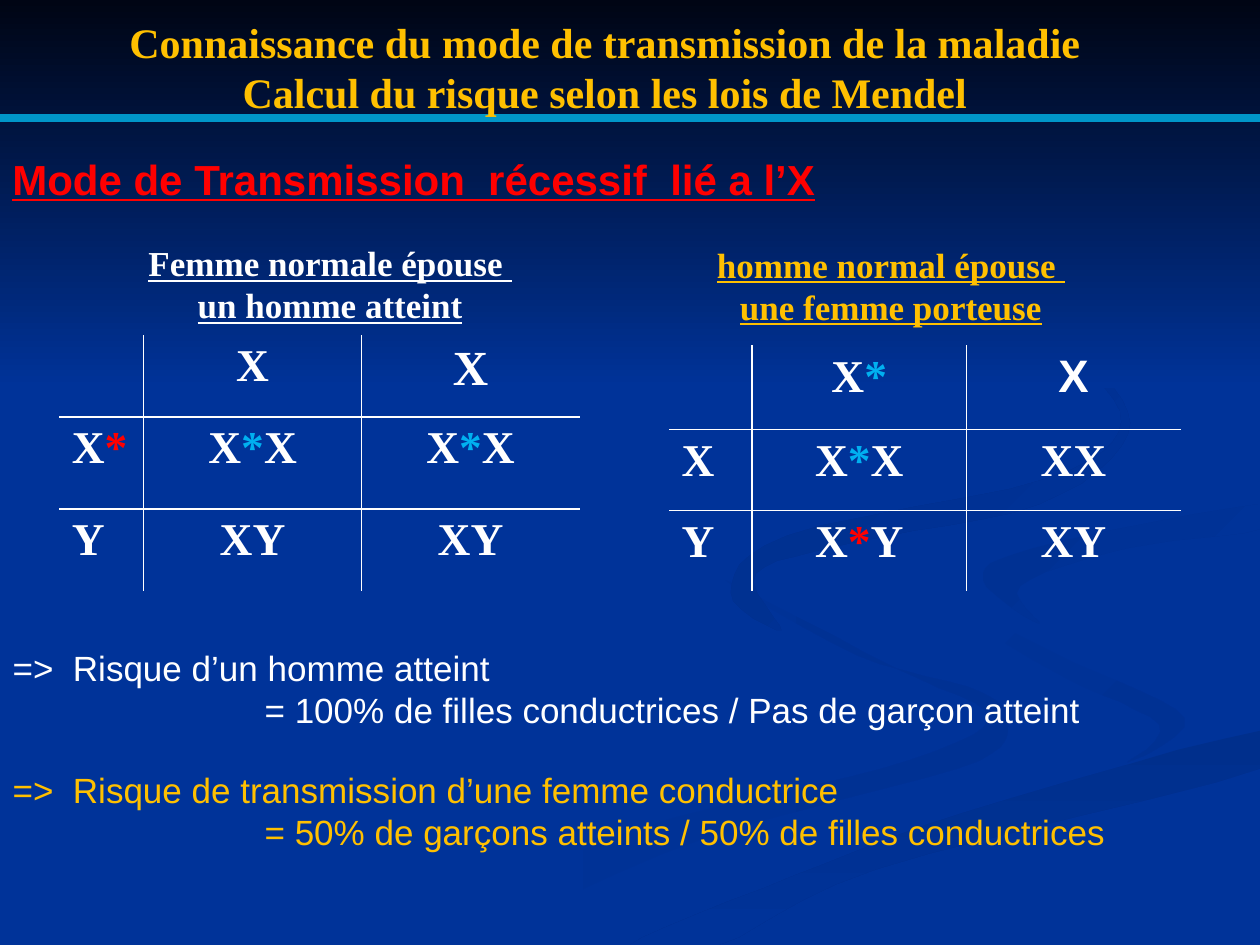
from lxml.etree import SubElement
from pptx import Presentation
from pptx.dml.color import RGBColor
from pptx.enum.shapes import MSO_CONNECTOR as CONN, MSO_SHAPE as SHAPE
from pptx.enum.text import MSO_ANCHOR as ANCHOR, MSO_AUTO_SIZE as AUTO, PP_ALIGN as ALIGN
from pptx.oxml.ns import qn
from pptx.util import Inches, Pt

NAVY = RGBColor(0x00, 0x33, 0x99)
NAVY_MID = RGBColor(0x00, 0x31, 0x93)
NAVY_DARK = RGBColor(0x00, 0x2F, 0x8C)
NIGHT = RGBColor(0x00, 0x05, 0x14)
WHITE = RGBColor(0xFF, 0xFF, 0xFF)
GOLD = RGBColor(0xFF, 0xC0, 0x00)
RED = RGBColor(0xFF, 0x00, 0x00)
SKY = RGBColor(0x00, 0xB0, 0xF0)
TEAL = RGBColor(0x00, 0x96, 0xC8)
SANS, SERIF = "Arial", "Times New Roman"

# Backdrop ribbons: start colour, end colour, angle, knots of a closed curve in inches
RIBBONS = [
    (NAVY, NAVY_MID, 0, [
        (7.8, 5.5), (6.8, 5.2), (5.75, 4.6), (7.1, 5.3), (7.85, 5.7), (7, 6.1),
        (5, 6.6), (3, 7.5), (3.6, 7.5), (5.6, 6.65), (7.6, 6.1), (8, 5.8)]),
    (NAVY, NAVY_MID, 45, [
        (9.4, 5.7), (8.5, 5.25), (7.25, 4.65), (8.4, 5.35), (9.2, 5.75), (8.95, 6.05)]),
    (NAVY_DARK, NAVY, 90, [
        (5, 7.5), (5.7, 7.5), (6.95, 6.9), (10, 6.1), (10, 5.8), (7.65, 6.45), (6.3, 6.95)]),
    (NAVY_MID, NAVY, 45, [
        (7.8, 4.6), (8.25, 4.95), (8.1, 4.65), (8.95, 4.35), (10, 4.2), (10, 4), (8.2, 4.35)]),
    (NAVY_DARK, NAVY, 45, [
        (6.8, 4.3), (8.25, 4), (8.95, 3.45), (8.65, 2.9), (7.6, 2.35), (8.45, 2.8),
        (8.9, 3.35), (8.3, 3.8), (6.25, 4.25), (5.8, 4.7), (6.2, 5), (6, 4.55)]),
]


def smooth_outline(knots, steps=6):
    """Closed Catmull-Rom curve through the knots, kept within the slide."""
    points = []
    for i in range(len(knots)):
        around = [knots[(i + k) % len(knots)] for k in (-1, 0, 1, 2)]
        for t in (step / steps for step in range(steps)):
            x, y = (b + t * (c - a + t * (2 * a - 5 * b + 4 * c - d
                                          + t * (3 * b - a - 3 * c + d))) / 2
                    for a, b, c, d in zip(*around))
            points.append((min(x, 10) * 100, min(y, 7.5) * 100))
    return points


def paint(sp, start, end, angle):
    """Fill a borderless shape with a two-colour gradient."""
    sp.shadow.inherit = False
    sp.line.fill.background()
    sp.fill.gradient()
    sp.fill.gradient_angle = (360 - angle) % 360
    for stop, color in zip(sp.fill.gradient_stops, (start, end)):
        stop.color.rgb = color


def add_ribbon(s, start, end, angle, knots):
    points = smooth_outline(knots)
    builder = s.shapes.build_freeform(*points[0], scale=Inches(0.01))
    builder.add_line_segments(points[1:])
    paint(builder.convert_to_shape(), start, end, angle)


def add_backdrop(s):
    s.background.fill.solid()
    s.background.fill.fore_color.rgb = NAVY
    for ribbon in RIBBONS:
        add_ribbon(s, *ribbon)
    band = s.shapes.add_shape(SHAPE.RECTANGLE, 0, 0, Inches(10), Inches(3.08))
    paint(band, NIGHT, NAVY, 90)
    rule = s.shapes.add_connector(CONN.STRAIGHT, 0, Inches(0.94), Inches(10), Inches(0.94))
    rule.line.color.rgb = TEAL
    rule.line.width = Pt(4.5)
    SubElement(rule._element.spPr, qn("a:effectLst"))


def place(sp, left, top, width, height):
    sp.left, sp.top, sp.width, sp.height = map(Inches, (left, top, width, height))


def add_run(p, text, size, font, color, bold=False, underline=False):
    r = p.add_run()
    r.text = text
    r.font.size, r.font.name = Pt(size), font
    r.font.bold, r.font.underline = bold, underline
    r.font.color.rgb = color


def write_lines(tf, lines, align, *style, indents=(0, 0)):
    """Write one paragraph per line, without bullets."""
    tf.word_wrap = True
    tf.auto_size = AUTO.NONE
    tf.vertical_anchor = ANCHOR.TOP
    for i, line in enumerate(lines):
        p = tf.paragraphs[0] if i == 0 else tf.add_paragraph()
        pPr = p._p.get_or_add_pPr()
        pPr.set("marL", str(Inches(indents[i])))
        pPr.set("indent", "0")
        SubElement(pPr, qn("a:buNone"))
        p.alignment = align
        p.space_before = Pt(0)
        add_run(p, line, *style)


def add_heading(s, box, lines, align, *style):
    sp = s.shapes.add_textbox(0, 0, 0, 0)
    place(sp, *box)
    write_lines(sp.text_frame, lines, align, *style, True, True)


def set_border(cell, side, visible):
    ln = SubElement(cell._tc.get_or_add_tcPr(), qn(f"a:ln{side}"), w=str(Pt(1)))
    if visible:
        fill = SubElement(ln, qn("a:solidFill"))
        SubElement(fill, qn("a:srgbClr"), val=str(WHITE))
    else:
        SubElement(ln, qn("a:noFill"))


def add_cross(s, box, cols, heights, rows, red_cell, last_head):
    """Crossing table: inner rules only, coloured star on the affected X."""
    table = s.shapes.add_table(3, 3, *map(Inches, box)).table
    table.first_row = table.horz_banding = False
    for col, width in zip(table.columns, cols):
        col.width = Inches(width)
    for row, height in zip(table.rows, heights):
        row.height = Inches(height)
    for i, texts in enumerate(rows):
        for j, text in enumerate(texts):
            cell = table.cell(i, j)
            for side, visible in (("L", j > 0), ("R", j < 2), ("T", i > 0), ("B", i < 2)):
                set_border(cell, side, visible)
            cell.fill.background()
            p = cell.text_frame.paragraphs[0]
            p.alignment = ALIGN.CENTER if j else ALIGN.LEFT
            size, font = last_head if (i, j) == (0, 2) else (26, SERIF)
            star = RED if (i, j) == red_cell else SKY
            before, mark, after = text.partition("*")
            for part, color in ((before, WHITE), (mark, star), (after, WHITE)):
                if part:
                    add_run(p, part, size, font, color, True)


def main():
    prs = Presentation()
    prs.slide_width, prs.slide_height = Inches(10), Inches(7.5)
    s = prs.slides.add_slide(prs.slide_layouts[3])
    title, risk_man, risk_woman = list(s.placeholders)[:3]
    add_backdrop(s)

    # Title and conclusions stand in front of the backdrop
    for sp in (title, risk_man, risk_woman):
        s.shapes._spTree.append(sp._element)
    place(title, 0.62, 0.08, 8.36, 0.86)
    write_lines(title.text_frame, ["Connaissance du mode de transmission de la maladie",
                                   "Calcul du risque selon les lois de Mendel"],
                ALIGN.CENTER, 24, SERIF, GOLD, True)
    place(risk_man, 0, 5.08, 10, 0.77)
    write_lines(risk_man.text_frame, ["=>  Risque d’un homme atteint",
                                      "= 100% de filles conductrices / Pas de garçon atteint"],
                ALIGN.LEFT, 20, SANS, WHITE, indents=(0, 2))
    place(risk_woman, 0, 6.05, 9.77, 0.77)
    write_lines(risk_woman.text_frame, ["=>  Risque de transmission d’une femme conductrice",
                                        "= 50% de garçons atteints / 50% de filles conductrices"],
                ALIGN.LEFT, 20, SANS, GOLD, indents=(0, 2))

    # Headings
    add_heading(s, (0, 1.17, 7.03, 0.51), ["Mode de Transmission  récessif  lié a l’X"],
                ALIGN.LEFT, 24, SANS, RED)
    add_heading(s, (1.02, 1.87, 3.2, 0.77), ["Femme normale épouse ", "un homme atteint"],
                ALIGN.CENTER, 20, SERIF, WHITE)
    add_heading(s, (5.31, 1.88, 3.52, 0.77), ["homme normal épouse ", "une femme porteuse"],
                ALIGN.CENTER, 20, SERIF, GOLD)

    # Crossing tables
    add_cross(s, (0.47, 2.66, 4.14, 2.03), (0.67, 1.73, 1.73), (0.65, 0.73, 0.65),
              [("", "X", "X"), ("X*", "X*X", "X*X"), ("Y", "XY", "XY")], (1, 0), (28, SERIF))
    add_cross(s, (5.31, 2.74, 4.06, 1.95), (0.66, 1.7, 1.7), (0.67, 0.64, 0.64),
              [("", "X*", "X"), ("X", "X*X", "XX"), ("Y", "X*Y", "XY")], (2, 1), (26, SANS))
    prs.save("out.pptx")


if __name__ == "__main__":
    main()
